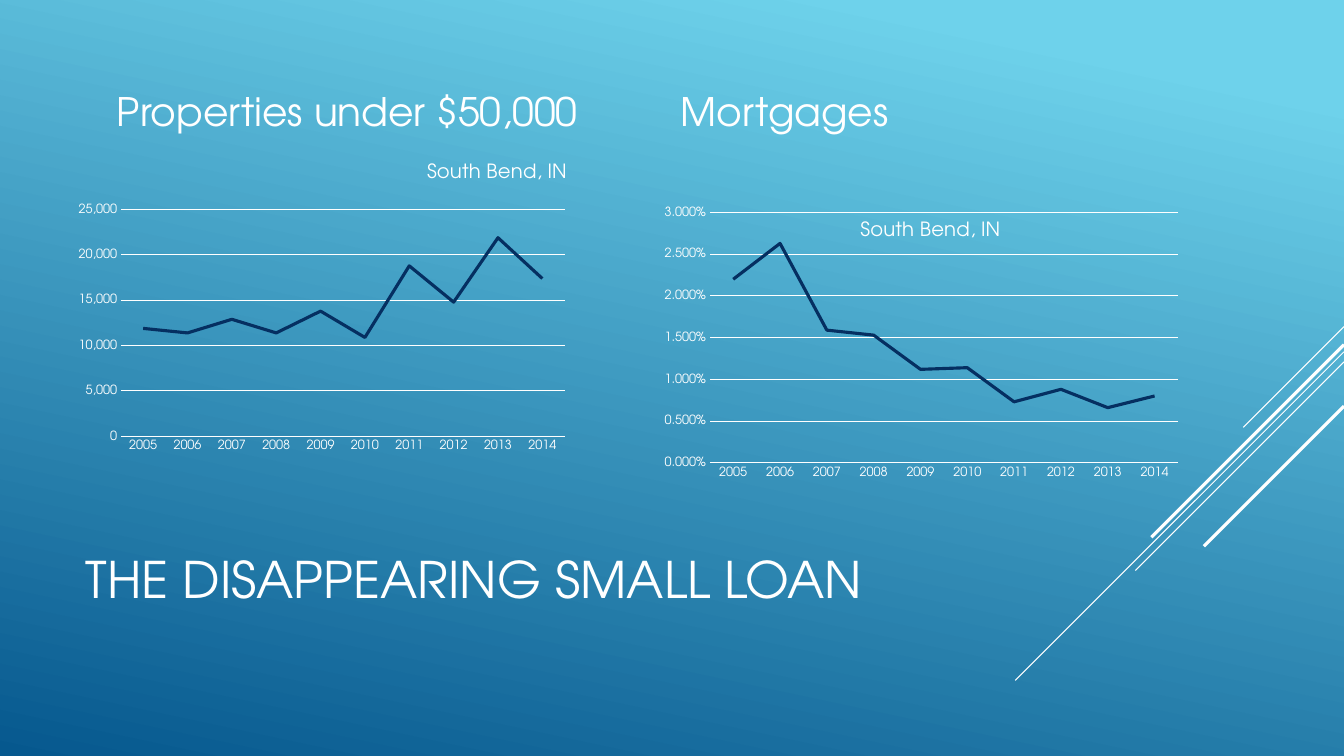
from dataclasses import dataclass

from lxml.etree import SubElement
from pptx import Presentation
from pptx.chart.data import CategoryChartData
from pptx.dml.color import RGBColor
from pptx.enum.chart import XL_CHART_TYPE as ChartType, XL_MARKER_STYLE as Marker, XL_TICK_MARK as Tick
from pptx.enum.shapes import MSO_CONNECTOR as Connector
from pptx.enum.text import MSO_ANCHOR as Anchor, MSO_AUTO_SIZE as AutoSize, PP_ALIGN as Align
from pptx.oxml import parse_xml
from pptx.oxml.ns import nsdecls, qn
from pptx.util import Inches, Pt

COLORS = {"sky": "6ED2EB", "ocean": "06588E", "navy": "052F61", "white": "FFFFFF"}
FONT = "TeX Gyre Adventor"
PLACE = "South Bend, IN"
YEARS = [str(year) for year in range(2005, 2015)]
PAGE_WIDTH, PAGE_HEIGHT = 13.33, 7.5


@dataclass(frozen=True)
class Label:
    placeholder: int
    text: str
    box: tuple[float, float, float, float]
    size: int
    anchor: Anchor
    before: float = 0
    after: float = 0


@dataclass(frozen=True)
class Ray:
    top: float
    reach: float
    weight: float


@dataclass(frozen=True)
class Trend:
    box: tuple[float, float, float, float]
    values: list[float]
    top: float
    step: float
    number_format: str
    plot: dict[str, float]
    heading: dict[str, float]


LABELS = [
    Label(0, "THE DISAPPEARING SMALL LOAN", (0.75, 4.91, 9.33, 1.65), 36, Anchor.MIDDLE),
    Label(1, "Properties under $50,000", (1.06, 0.75, 5.09, 0.63), 28, Anchor.BOTTOM, 5.6, 6),
    Label(3, "Mortgages", (6.65, 0.75, 5.1, 0.63), 28, Anchor.BOTTOM, 5.6, 6),
]
RAYS = [
    Ray(3.24, 1, 0.75),
    Ray(3.49, 3.26, 0.75),
    Ray(3.59, 2.07, 0.75),
    Ray(3.42, 1.91, 2.25),
    Ray(4.03, 1.39, 2.25),
]
TRENDS = [
    Trend(
        (6.5, 2.01, 5.4, 3.31),
        [0.022, 0.0263, 0.0159, 0.0153, 0.0112, 0.0114, 0.0073, 0.0088, 0.0066, 0.008],
        0.03, 0.005, "0.000%",
        {"x": 0.1, "y": 0.03, "w": 0.86, "h": 0.75},
        {"x": 0.37, "y": 0.04},
    ),
    Trend(
        (0.7, 1.54, 5, 3),
        [11900, 11400, 12900, 11400, 13800, 10900, 18800, 14800, 21900, 17400],
        25000, 5000, "#,##0",
        {"x": 0.1, "y": 0.18, "w": 0.88, "h": 0.75},
        {"x": 0.7, "y": 0.01},
    ),
]


def color(name: str) -> RGBColor:
    return RGBColor.from_string(COLORS[name])


def style_font(font, size: float) -> None:
    font.name = FONT
    font.size = Pt(size)
    font.bold = False
    font.color.rgb = color("white")


def style_line(line, name: str, weight: float) -> None:
    line.color.rgb = color(name)
    line.width = Pt(weight)


def paint_background(page) -> None:
    fill = page.background.fill
    fill.gradient()
    fill.gradient_angle = 258
    for stop, name, position in zip(fill.gradient_stops, ("sky", "ocean"), (0.1, 1)):
        stop.color.rgb = color(name)
        stop.position = position


def draw_ray(page, ray: Ray) -> None:
    ends = (PAGE_WIDTH, ray.top, PAGE_WIDTH - ray.reach, ray.top + ray.reach)
    line = page.shapes.add_connector(Connector.STRAIGHT, *map(Inches, ends))
    style_line(line.line, "white", ray.weight)
    SubElement(line._element.spPr, qn("a:effectLst"))


def write_label(box, label: Label) -> None:
    box.left, box.top, box.width, box.height = map(Inches, label.box)
    frame = box.text_frame
    frame.text = label.text
    frame.word_wrap = True
    frame.auto_size = AutoSize.NONE
    frame.vertical_anchor = label.anchor
    para = frame.paragraphs[0]
    para.alignment = Align.LEFT
    para.space_before = Pt(label.before)
    para.space_after = Pt(label.after)
    style_font(para.runs[0].font, label.size)


def set_layout(parent, index: int, position: dict[str, float], target: str = "") -> None:
    for old in parent.findall(qn("c:layout")):
        parent.remove(old)
    modes = "".join(f'<c:{side}Mode val="edge"/>' for side in "xy")
    sizes = "".join(f'<c:{side} val="{share}"/>' for side, share in position.items())
    parent.insert(index, parse_xml(
        f'<c:layout {nsdecls("c")}><c:manualLayout>{target}{modes}{sizes}</c:manualLayout></c:layout>'
    ))


def draw_trend(page, trend: Trend) -> None:
    data = CategoryChartData()
    data.categories = YEARS
    data.add_series(PLACE, trend.values, trend.number_format)
    chart = page.shapes.add_chart(ChartType.LINE, *map(Inches, trend.box), data).chart
    style_font(chart.font, 10)
    chart.has_legend = False
    chart.plots[0].vary_by_categories = False

    chart.has_title = True
    heading = chart.chart_title.text_frame
    heading.text = PLACE
    style_font(heading.paragraphs[0].runs[0].font, 14)
    set_layout(chart.chart_title._element, 1, trend.heading)
    set_layout(chart._chartSpace.chart.plotArea, 0, trend.plot, '<c:layoutTarget val="inner"/>')

    for axis in (chart.category_axis, chart.value_axis):
        axis.major_tick_mark = axis.minor_tick_mark = Tick.NONE
        style_font(axis.tick_labels.font, 9)
    style_line(chart.category_axis.format.line, "white", 0.75)
    scale = chart.value_axis
    scale.minimum_scale = 0
    scale.maximum_scale = trend.top
    scale.major_unit = trend.step
    scale.format.line.fill.background()
    scale.has_major_gridlines = True
    style_line(scale.major_gridlines.format.line, "white", 0.75)
    scale.tick_labels.number_format = trend.number_format
    scale.tick_labels.number_format_is_linked = False

    series = chart.plots[0].series[0]
    series.smooth = False
    series.marker.style = Marker.NONE
    style_line(series.format.line, "navy", 2.25)


def main() -> None:
    deck = Presentation()
    deck.slide_width = Inches(PAGE_WIDTH)
    deck.slide_height = Inches(PAGE_HEIGHT)
    page = deck.slides.add_slide(deck.slide_layouts.get_by_name("Comparison"))
    paint_background(page)
    boxes = {box.placeholder_format.idx: box for box in page.placeholders}
    for label in LABELS:
        write_label(boxes.pop(label.placeholder), label)
    for empty in boxes.values():
        page.shapes._spTree.remove(empty._element)
    for ray in RAYS:
        draw_ray(page, ray)
    for trend in TRENDS:
        draw_trend(page, trend)
    deck.save("out.pptx")


if __name__ == "__main__":
    main()
